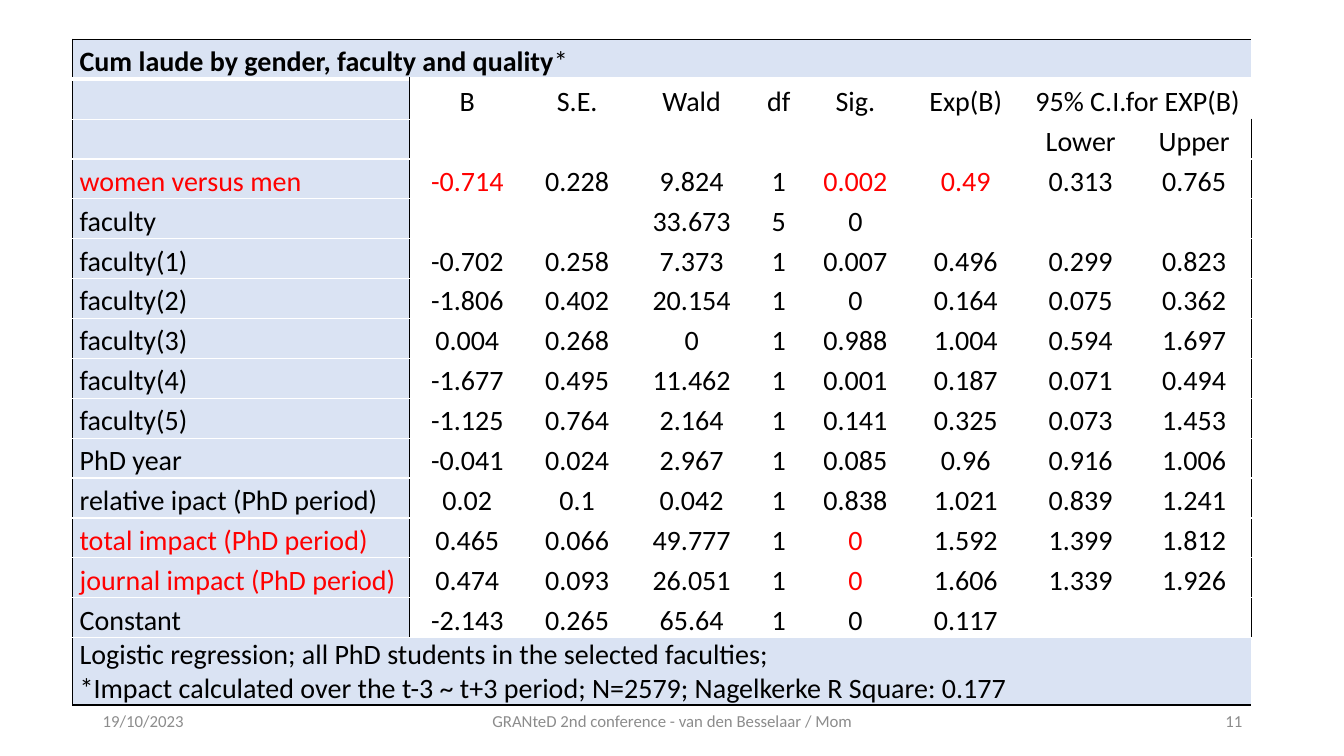
"""Build the slide with the logistic regression table on cum laude."""
from lxml.etree import SubElement
from pptx import Presentation
from pptx.dml.color import RGBColor
from pptx.enum.text import MSO_ANCHOR as ANCHOR, PP_ALIGN as ALIGN
from pptx.oxml.ns import qn
from pptx.util import Inches, Pt

BLACK, WHITE, RED, GREY, BLUE = "000000", "FFFFFF", "FF0000", "8C8C8C", "DAE3F3"


def style(tf, size, color, align):
    for p in tf.paragraphs:
        p.alignment = align
        p.font.size = Pt(size)
        for r in p.runs:
            r.font.name, r.font.size = "Calibri", Pt(size)
            r.font.color.rgb = RGBColor.from_string(color)


def border(cell, side, color, width=1):
    ln = SubElement(cell._tc.get_or_add_tcPr(), qn(f"a:ln{side}"), w=str(Pt(width)))
    fill = SubElement(ln, qn("a:solidFill"))
    SubElement(fill, qn("a:srgbClr"), val=color)


prs = Presentation()
prs.slide_width, prs.slide_height = Inches(13.33), Inches(7.5)
s = prs.slides.add_slide(prs.slide_layouts[6])

footers = [
    (0.92, 3, "19/10/2023", ALIGN.LEFT),
    (4.42, 4.5, "GRANteD 2nd conference - van den Besselaar / Mom", ALIGN.CENTER),
    (9.42, 3, "11", ALIGN.RIGHT),
]
for left, width, text, align in footers:
    tf = s.shapes.add_textbox(Inches(left), Inches(6.95), Inches(width), Inches(0.4)).text_frame
    tf.word_wrap = True
    tf.vertical_anchor = ANCHOR.MIDDLE
    tf.text = text
    style(tf, 12, GREY, align)

rows = [
    ["Cum laude by gender, faculty and quality"],
    ["", "B", "S.E.", "Wald", "df", "Sig.", "Exp(B)", "95% C.I.for EXP(B)"],
    ["", "", "", "", "", "", "", "Lower", "Upper"],
    ["women versus men", "-0.714", "0.228", "9.824", "1", "0.002", "0.49", "0.313", "0.765"],
    ["faculty", "", "", "33.673", "5", "0"],
    ["faculty(1)", "-0.702", "0.258", "7.373", "1", "0.007", "0.496", "0.299", "0.823"],
    ["faculty(2)", "-1.806", "0.402", "20.154", "1", "0", "0.164", "0.075", "0.362"],
    ["faculty(3)", "0.004", "0.268", "0", "1", "0.988", "1.004", "0.594", "1.697"],
    ["faculty(4)", "-1.677", "0.495", "11.462", "1", "0.001", "0.187", "0.071", "0.494"],
    ["faculty(5)", "-1.125", "0.764", "2.164", "1", "0.141", "0.325", "0.073", "1.453"],
    ["PhD year", "-0.041", "0.024", "2.967", "1", "0.085", "0.96", "0.916", "1.006"],
    ["relative ipact (PhD period)", "0.02", "0.1", "0.042", "1", "0.838", "1.021", "0.839", "1.241"],
    ["total impact (PhD period)", "0.465", "0.066", "49.777", "1", "0", "1.592", "1.399", "1.812"],
    ["journal impact (PhD period)", "0.474", "0.093", "26.051", "1", "0", "1.606", "1.339", "1.926"],
    ["Constant", "-2.143", "0.265", "65.64", "1", "0", "0.117"],
    ["Logistic regression; all PhD students in the selected faculties;\n"
     "*Impact calculated over the t-3 ~ t+3 period; N=2579; Nagelkerke R Square: 0.177"],
]
red_columns = {3: (0, 1, 5, 6), 12: (0, 5), 13: (0, 5)}
widths = [3.34, 1.15, 1.03, 1.24, 0.49, 1.03, 1.16, 1.12, 1.13]
height, note_height = 6.61, 0.67
last_row, last_col = len(rows) - 1, len(widths) - 1

table = s.shapes.add_table(len(rows), len(widths), Inches(0.72), Inches(0.39),
                           Inches(sum(widths)), Inches(height)).table
table.first_row = table.horz_banding = False
for col, width in zip(table.columns, widths):
    col.width = Inches(width)
for row in table.rows:
    row.height = Inches((height - note_height) / last_row)
table.rows[last_row].height = Inches(note_height)

for i, texts in enumerate(rows):
    full = i in (0, last_row)
    for j in range(len(widths)):
        cell = table.cell(i, j)
        label = full or j == 0
        cell.margin_left = cell.margin_right = Inches(0.07)
        cell.margin_top = cell.margin_bottom = 0
        cell.vertical_anchor = ANCHOR.MIDDLE if i == last_row else ANCHOR.BOTTOM
        cell.text_frame.text = texts[j] if j < len(texts) else ""
        style(cell.text_frame, 20, RED if j in red_columns.get(i, ()) else BLACK,
              ALIGN.JUSTIFY if label else ALIGN.CENTER)
        if j < 2 and not (full and j):
            border(cell, "L", BLACK)
        if j == last_col or (j == 0 and not full):
            border(cell, "R", BLACK)
        if label:
            border(cell, "T", BLACK if i == 0 else WHITE)
            border(cell, "B", BLACK if i == last_row else WHITE, 1 if i else 3)
            cell.fill.solid()
            cell.fill.fore_color.rgb = RGBColor.from_string(BLUE)
        else:
            cell.fill.background()

title = table.cell(0, 0).text_frame
title.paragraphs[0].add_run().text = "*"
style(title, 20, BLACK, ALIGN.JUSTIFY)
title.paragraphs[0].runs[0].font.bold = True

for i in (0, last_row):
    table.cell(i, 0).merge(table.cell(i, last_col))
table.cell(1, last_col - 1).merge(table.cell(1, last_col))

prs.save("out.pptx")
